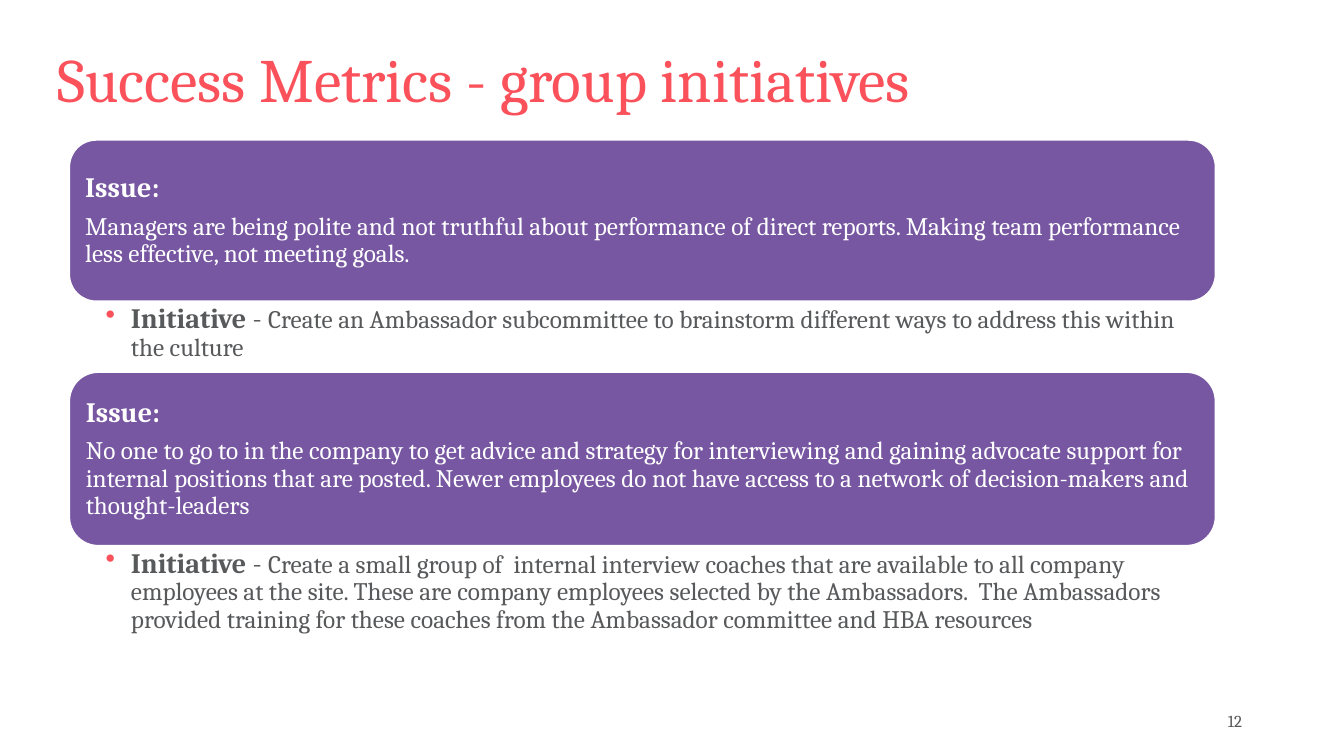
import pptx
import pptx.util
import pptx.dml.color
import pptx.enum.shapes
import pptx.enum.text
import pptx.oxml
import pptx.oxml.ns
from pptx.util import Cm, Pt

TITLE = "Success Metrics - group initiatives"
PAGE_NUMBER = "12"
FONT = "Cambria"
CORAL, PURPLE, GREY, WHITE = "FB515B", "7757A1", "58595B", "FFFFFF"

# Top, issue height, initiative height (cm), issue, initiative
TOPICS = [
    (3.53, 4.06, 1.8,
     "Managers are being polite and not truthful about performance of direct "
     "reports. Making team performance less effective, not meeting goals.",
     "Create an Ambassador subcommittee to brainstorm different ways to "
     "address this within the culture"),
    (9.38, 4.37, 3.38,
     "No one to go to in the company to get advice and strategy for "
     "interviewing and gaining advocate support for internal positions that "
     "are posted. Newer employees do not have access to a network of "
     "decision-makers and thought-leaders",
     "Create a small group of  internal interview coaches that are available "
     "to all company employees at the site. These are company employees "
     "selected by the Ambassadors.  The Ambassadors provided training for "
     "these coaches from the Ambassador committee and HBA resources"),
]
LEFT, WIDTH = 1.75, 28.88
MIDDLE = pptx.enum.text.MSO_ANCHOR.MIDDLE
TOP = pptx.enum.text.MSO_ANCHOR.TOP
ALIGN = pptx.enum.text.PP_ALIGN


def colour(code):
    return pptx.dml.color.RGBColor.from_string(code)


def set_frame(box, anchor, sides=(0.25, 0.13, 0.25, 0.13)):
    frame = box.text_frame
    frame.word_wrap = True
    frame.auto_size = pptx.enum.text.MSO_AUTO_SIZE.NONE
    frame.vertical_anchor = anchor
    (frame.margin_left, frame.margin_top,
     frame.margin_right, frame.margin_bottom) = map(Cm, sides)
    return frame


def write(para, spans, code, spacing=None, after=0, align=ALIGN.LEFT):
    para.alignment = align
    para.line_spacing = spacing
    para.space_before = Pt(0)
    para.space_after = Pt(after)
    for text, size, bold in spans:
        span = para.add_run()
        span.text = text
        span.font.name = FONT
        span.font.size = Pt(size)
        span.font.bold = bold
        span.font.color.rgb = colour(code)


def add_bullet(para, code):
    properties = para._p.get_or_add_pPr()
    properties.set("marL", str(Cm(0.64)))
    properties.set("indent", str(-Cm(0.64)))
    space = pptx.oxml.ns.nsdecls("a")
    for xml in (f'<a:buClr {space}><a:srgbClr val="{code}"/></a:buClr>',
                f'<a:buChar {space} char="•"/>'):
        properties.append(pptx.oxml.parse_xml(xml))


deck = pptx.Presentation()
deck.slide_width, deck.slide_height = Cm(33.87), Cm(19.05)
page = deck.slides.add_slide(deck.slide_layouts[5])

# Title
title = page.shapes.title
title.left, title.top, title.width, title.height = map(Cm, (1.19, 0.05, 31.5, 4.04))
frame = set_frame(title, MIDDLE)
write(frame.paragraphs[0], [(TITLE, 44, False)], CORAL, 0.9)

# Issue panels, each followed by its initiative
for top, issue_height, initiative_height, issue, initiative in TOPICS:
    panel = page.shapes.add_shape(
        pptx.enum.shapes.MSO_SHAPE.ROUNDED_RECTANGLE,
        Cm(LEFT), Cm(top), Cm(WIDTH), Cm(issue_height))
    panel.shadow.inherit = False
    panel.fill.solid()
    panel.fill.fore_color.rgb = colour(PURPLE)
    panel.line.color.rgb = colour(WHITE)
    panel.line.width = Pt(1)
    frame = set_frame(panel, MIDDLE, (0.2, 0.2, 0.2, 0.2))
    write(frame.paragraphs[0], [("Issue:", 20, True)], WHITE, 0.9, 7)
    write(frame.add_paragraph(), [(issue, 18, False)], WHITE, 0.9, 6.3)

    box = page.shapes.add_textbox(
        Cm(LEFT), Cm(top + issue_height), Cm(WIDTH), Cm(initiative_height))
    para = set_frame(box, TOP, (0.91, 0.08, 0.41, 0.08)).paragraphs[0]
    add_bullet(para, CORAL)
    write(para, [("Initiative", 20, True), (" - ", 20, False),
                 (initiative, 18, False)], GREY, 0.9, 4)

# Page number
number = page.shapes.add_textbox(Cm(23.93), Cm(17.65), Cm(7.62), Cm(1.02))
frame = set_frame(number, MIDDLE)
write(frame.paragraphs[0], [(PAGE_NUMBER, 12, False)], GREY, align=ALIGN.RIGHT)

deck.save("out.pptx")
